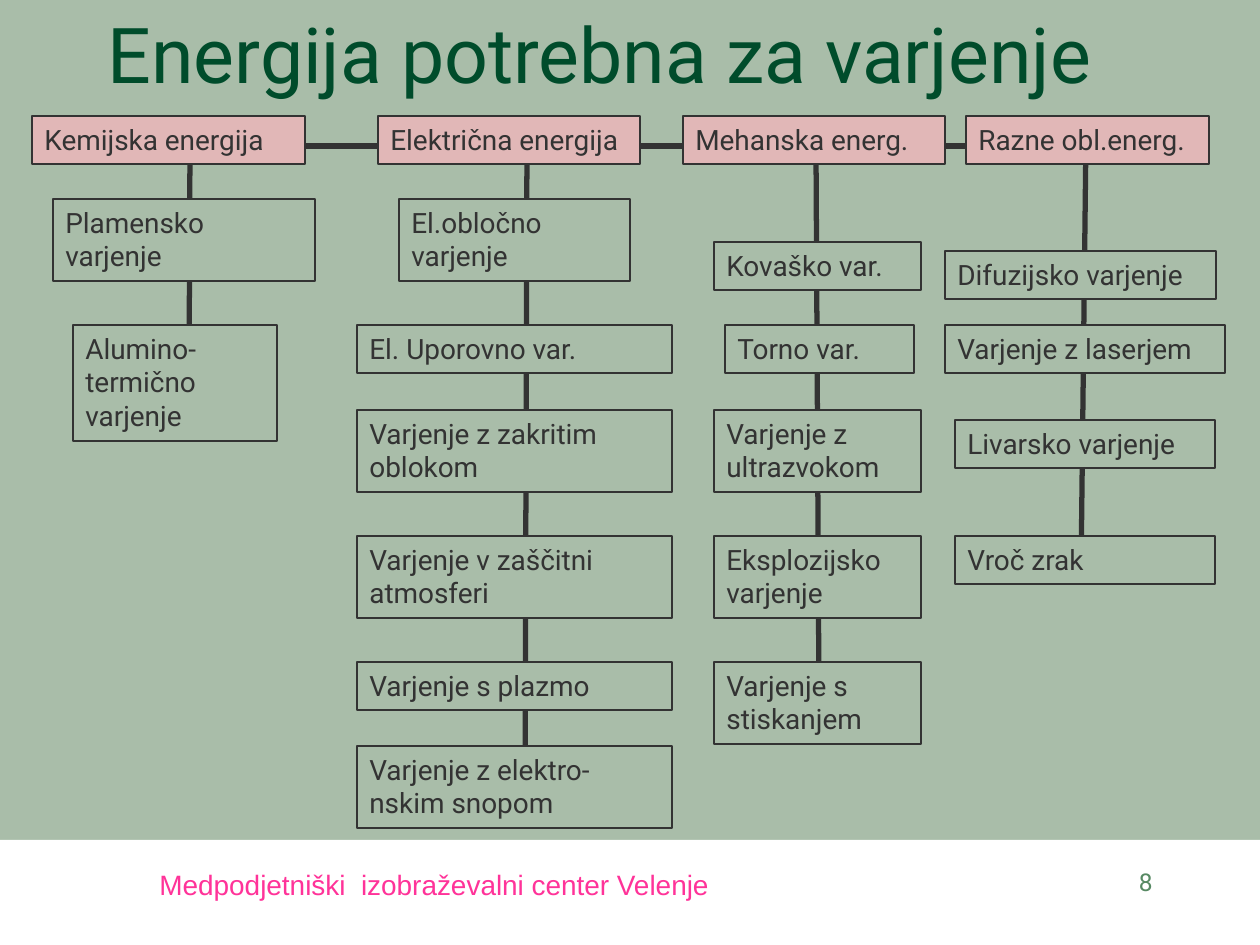
from lxml.etree import SubElement
from pptx import Presentation
from pptx.dml.color import RGBColor
from pptx.enum.shapes import MSO_CONNECTOR, MSO_SHAPE
from pptx.enum.text import MSO_ANCHOR, MSO_AUTO_SIZE, PP_ALIGN
from pptx.oxml.ns import qn
from pptx.util import Emu, Pt

EMU_PER_PX = 914400 / 126
SAGE = "A9BDA9"
PINK = "E1B7B7"
DARK = "333333"

HEADER_TOP = 116
HEADERS = [
    ("Kemijska energija", 32, 273),
    ("Električna energija", 378, 262),
    ("Mehanska energ.", 683, 262),
    ("Razne obl.energ.", 966, 243),
]
PROCESSES = [
    ("Plamensko\nvarjenje", 53, 199, 262, 2),
    ("Alumino-termično varjenje", 73, 325, 204, 3),
    ("El.obločno varjenje", 399, 199, 231, 2),
    ("El. Uporovno var.", 357, 325, 315, 1),
    ("Varjenje z zakritim\noblokom", 357, 410, 315, 2),
    ("Varjenje v zaščitni atmosferi", 357, 536, 315, 2),
    ("Varjenje s plazmo", 357, 662, 315, 1),
    ("Varjenje z elektro-\nnskim snopom", 357, 746, 315, 2),
    ("Kovaško var.", 714, 242, 207, 1),
    ("Torno var.", 725, 325, 189, 1),
    ("Varjenje z ultrazvokom", 714, 410, 207, 2),
    ("Eksplozijsko varjenje", 714, 536, 207, 2),
    ("Varjenje s stiskanjem", 714, 662, 207, 2),
    ("Difuzijsko varjenje", 945, 251, 271, 1),
    ("Varjenje z laserjem", 945, 325, 280, 1),
    ("Livarsko varjenje", 955, 420, 260, 1),
    ("Vroč zrak", 955, 536, 260, 1),
]
BRANCHES = [
    (163, 146, 1121, 146),
    (190, 146, 189, 388),
    (527, 147, 525, 809),
    (816, 146, 819, 703),
    (1086, 136, 1081, 577),
]


def px(*lengths):
    return [Emu(round(length * EMU_PER_PX)) for length in lengths]


def color(hex_string):
    return RGBColor.from_string(hex_string)


def write_text(shape, text, size, font_name, font_color,
               align=PP_ALIGN.LEFT, anchor=MSO_ANCHOR.TOP,
               auto_size=MSO_AUTO_SIZE.NONE):
    frame = shape.text_frame
    frame.word_wrap = True
    frame.auto_size = auto_size
    frame.vertical_anchor = anchor
    for index, line in enumerate(text.split("\n")):
        paragraph = frame.add_paragraph() if index else frame.paragraphs[0]
        paragraph.alignment = align
        run = paragraph.add_run()
        run.text = line
        run.font.size = Pt(size)
        run.font.name = font_name
        run.font.color.rgb = color(font_color)


def add_title(slide, text):
    title = slide.shapes.title
    title.left, title.top, title.width, title.height = px(95, 21, 1071, 84)
    write_text(title, text, 44, "Roboto", "004C2B", anchor=MSO_ANCHOR.BOTTOM)


def add_rectangle(slide, left, top, width, height, fill):
    shape = slide.shapes.add_shape(MSO_SHAPE.RECTANGLE, *px(left, top, width, height))
    shape.shadow.inherit = False
    shape.fill.solid()
    shape.fill.fore_color.rgb = color(fill)
    shape.line.fill.background()
    return shape


def add_box(slide, text, left, top, width, line_count, fill):
    shape = add_rectangle(slide, left, top, width, 14 + 34 * line_count, fill)
    shape.line.color.rgb = color(DARK)
    shape.line.width = Pt(1)
    write_text(shape, text, 16, "Roboto", DARK,
               auto_size=MSO_AUTO_SIZE.SHAPE_TO_FIT_TEXT)


def add_branch(slide, start_x, start_y, end_x, end_y):
    connector = slide.shapes.add_connector(
        MSO_CONNECTOR.STRAIGHT, *px(start_x, start_y, end_x, end_y))
    connector.line.color.rgb = color(DARK)
    connector.line.width = Pt(3)
    SubElement(connector._element.spPr, qn("a:effectLst"))


def add_label(slide, text, position, size, font_name, font_color, align=PP_ALIGN.LEFT):
    label = slide.shapes.add_textbox(*px(*position))
    write_text(label, text, size, font_name, font_color, align)


def main():
    presentation = Presentation()
    presentation.slide_width, presentation.slide_height = px(1260, 945)
    slide = presentation.slides.add_slide(presentation.slide_layouts[5])
    slide.background.fill.solid()
    slide.background.fill.fore_color.rgb = color(SAGE)

    add_rectangle(slide, 0, 840, 1260, 105, "FFFFFF")
    add_label(slide, "Medpodjetniški  izobraževalni center Velenje",
              (147, 861, 588, 47), 16, "Arial", "FF3399")
    add_label(slide, "8", (903, 861, 262, 63), 14, "Roboto", "578963", PP_ALIGN.RIGHT)
    add_title(slide, "Energija potrebna za varjenje")

    for branch in BRANCHES:
        add_branch(slide, *branch)
    for text, left, width in HEADERS:
        add_box(slide, text, left, HEADER_TOP, width, 1, PINK)
    for process in PROCESSES:
        add_box(slide, *process, SAGE)

    presentation.save("out.pptx")


if __name__ == "__main__":
    main()
